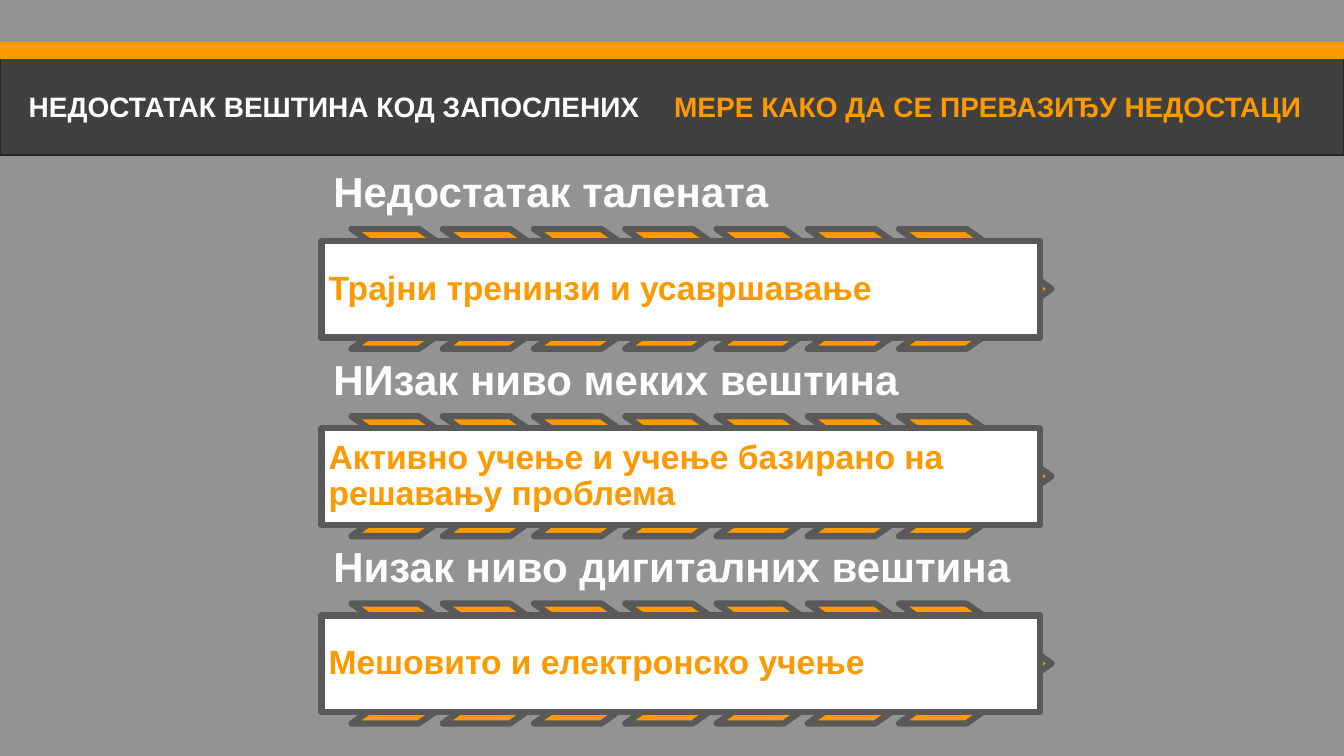
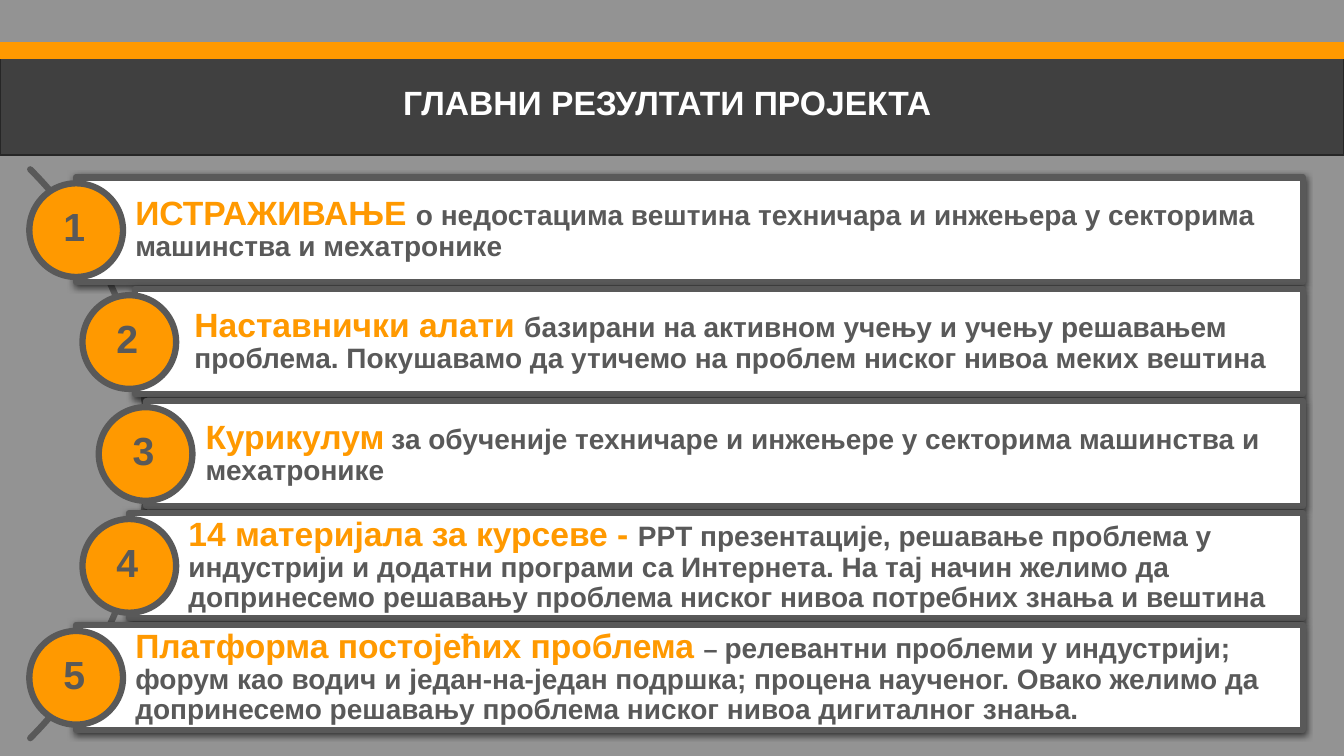
from dataclasses import dataclass

from lxml.etree import SubElement
from pptx import Presentation
from pptx.dml.color import RGBColor
from pptx.enum.shapes import MSO_SHAPE as Shape
from pptx.enum.text import MSO_ANCHOR as Anchor, PP_ALIGN as Align
from pptx.oxml.ns import qn
from pptx.util import Cm, Pt


@dataclass(frozen=True)
class Theme:
    font: str = "Arial"
    backdrop: str = "939393"
    band: str = "404040"
    band_edge: str = "262626"
    accent: str = "FF9900"
    outline: str = "595959"
    white: str = "FFFFFF"
    outline_width: float = 4.5
    heading: int = 30
    number: int = 28
    lead: int = 24
    body: int = 20
    joint: int = 18


THEME = Theme()
WIDTH, HEIGHT = 33.87, 19.05

SKILL_TITLES = [
    ("НЕДОСТАТАК ВЕШТИНА КОД ЗАПОСЛЕНИХ", THEME.white, THEME.body, (0, 2.13, 16.84, 1.12)),
    ("МЕРЕ КАКО ДА СЕ ПРЕВАЗИЂУ НЕДОСТАЦИ", THEME.accent, THEME.body, (16.36, 2.13, 17.07, 1.12)),
]
RESULT_TITLES = [
    ("ГЛАВНИ РЕЗУЛТАТИ ПРОЈЕКТА", THEME.white, THEME.lead, (6.3, 1.93, 21.03, 1.27)),
]
MEASURES = [
    ("Недостатак талената", "Трајни тренинзи и усавршавање"),
    ("НИзак ниво меких вештина", "Активно учење и учење базирано на решавању проблема"),
    ("Низак ниво дигиталних вештина", "Мешовито и електронско учење"),
]
RESULTS = [
    ("ИСТРАЖИВАЊЕ ", "",
     "o недостацима вештина техничара и инжењера у секторима машинства и мехатронике"),
    ("Наставнички алати ", "",
     "базирани на активном учењу и учењу решавањем проблема. "
     "Покушавамо да утичемо на проблем ниског нивоа меких вештина"),
    ("Курикулум", " ",
     "за обученије техничаре и инжењере у секторима машинства и мехатронике"),
    ("14 материјала за курсеве - ", "",
     "PPT презентације, решавање проблема у индустрији и додатни програми са Интернета. "
     "На тај начин желимо да допринесемо решавању проблема ниског нивоа потребних знања и вештина"),
    ("Платформа постојећих проблема ", "– ",
     "релевантни проблеми у индустрији; форум као водич и један-на-један подршка; "
     "процена наученог. Овако желимо да допринесемо решавању проблема ниског нивоа дигиталног знања."),
]
PANEL_LEFTS = [1.91, 3.4, 3.68, 3.25, 1.91]
CIRCLE_LEFTS = [0.74, 2.08, 2.49, 2.08, 0.74]


def colour(value):
    return RGBColor.from_string(value)


def add_figure(page, kind, place, fill=None, line=THEME.outline, width=THEME.outline_width):
    figure = page.shapes.add_shape(kind, *map(Cm, place))
    figure.shadow.inherit = False
    if fill:
        figure.fill.solid()
        figure.fill.fore_color.rgb = colour(fill)
    else:
        figure.fill.background()
    figure.line.color.rgb = colour(line)
    figure.line.width = Pt(width)
    return figure


def write(box, spans, align=Align.LEFT, anchor=Anchor.MIDDLE,
          insets=(0.25, 0.13, 0.25, 0.13), spacing=1.0):
    frame = box.text_frame
    frame.word_wrap = True
    frame.vertical_anchor = anchor
    frame.margin_left, frame.margin_top, frame.margin_right, frame.margin_bottom = map(Cm, insets)
    para = frame.paragraphs[0]
    para.alignment = align
    para.line_spacing = spacing
    for text, size, tint in spans:
        span = para.add_run()
        span.text = text
        span.font.name = THEME.font
        span.font.size = Pt(size)
        span.font.bold = True
        span.font.color.rgb = colour(tint)


def add_label(page, place, spans, **layout):
    write(page.shapes.add_textbox(*map(Cm, place)), spans, **layout)


def cast_shadow(figure):
    effects = figure._element.spPr.find(qn("a:effectLst"))
    shadow = SubElement(effects, qn("a:outerShdw"), blurRad=str(Pt(4.5)), dist=str(Pt(1.5)),
                        dir="5400000", algn="ctr", rotWithShape="0")
    tint = SubElement(shadow, qn("a:srgbClr"), val="000000")
    SubElement(tint, qn("a:alpha"), val="63000")


def add_page(deck, titles):
    page = deck.slides.add_slide(deck.slide_layouts[6])
    page.background.fill.solid()
    page.background.fill.fore_color.rgb = colour(THEME.backdrop)
    add_figure(page, Shape.RECTANGLE, (0, 1.07, WIDTH, 2.84), THEME.band, THEME.band_edge, 1)
    add_figure(page, Shape.RECTANGLE, (0, 1.07, WIDTH, 0.41), THEME.accent, THEME.accent, 1)
    for text, tint, size, place in titles:
        add_label(page, place, [(text, size, tint)], align=Align.CENTER, anchor=Anchor.TOP)
    return page


def build_measures(deck):
    page = add_page(deck, SKILL_TITLES)
    left, first_top, pitch = 8.1, 4.27, 4.72
    for row, (problem, measure) in enumerate(MEASURES):
        top = first_top + row * pitch
        add_label(page, (left, top, 24.97, 1.5), [(problem, THEME.heading, THEME.white)],
                  anchor=Anchor.BOTTOM, insets=(0.3,) * 4, spacing=0.9)
        for column in range(7):
            chevron = add_figure(page, Shape.CHEVRON,
                                 (8.86 + column * 2.3, top + 1.5, 3.84, 3.02), THEME.accent)
            chevron.adjustments[0] = 0.71
        panel = add_figure(page, Shape.RECTANGLE, (left, top + 1.8, 18.11, 2.44), THEME.white)
        write(panel, [(measure, THEME.lead, THEME.accent)], insets=(0.18,) * 4, spacing=0.9)


def build_results(deck):
    page = add_page(deck, RESULT_TITLES)
    arc = add_figure(page, Shape.BLOCK_ARC, (-16.54, 1.3, 20.27, 20.27))
    for index, value in enumerate((189, 27, 0)):
        arc.adjustments[index] = value
    first_top, pitch, right, diameter = 4.47, 2.82, 32.84, 2.36
    rows = zip(RESULTS, PANEL_LEFTS, CIRCLE_LEFTS)
    for row, ((lead, joint, body), panel_left, circle_left) in enumerate(rows):
        top = first_top + row * pitch
        panel = add_figure(page, Shape.RECTANGLE,
                           (panel_left, top, right - panel_left, 2.64), THEME.white)
        cast_shadow(panel)
        spans = [(lead, THEME.lead, THEME.accent), (joint, THEME.joint, THEME.outline),
                 (body, THEME.body, THEME.outline)]
        write(panel, [span for span in spans if span[0]],
              insets=(1.5, 0.18, 0.18, 0.18), spacing=0.9)
        circle = add_figure(page, Shape.OVAL,
                            (circle_left, top + 0.15, diameter, diameter), THEME.accent)
        write(circle, [(str(row + 1), THEME.number, THEME.outline)],
              align=Align.CENTER, insets=(0, 0, 0.1, 0.2))


def main():
    deck = Presentation()
    deck.slide_width, deck.slide_height = Cm(WIDTH), Cm(HEIGHT)
    build_measures(deck)
    build_results(deck)
    deck.save("out.pptx")


if __name__ == "__main__":
    main()
